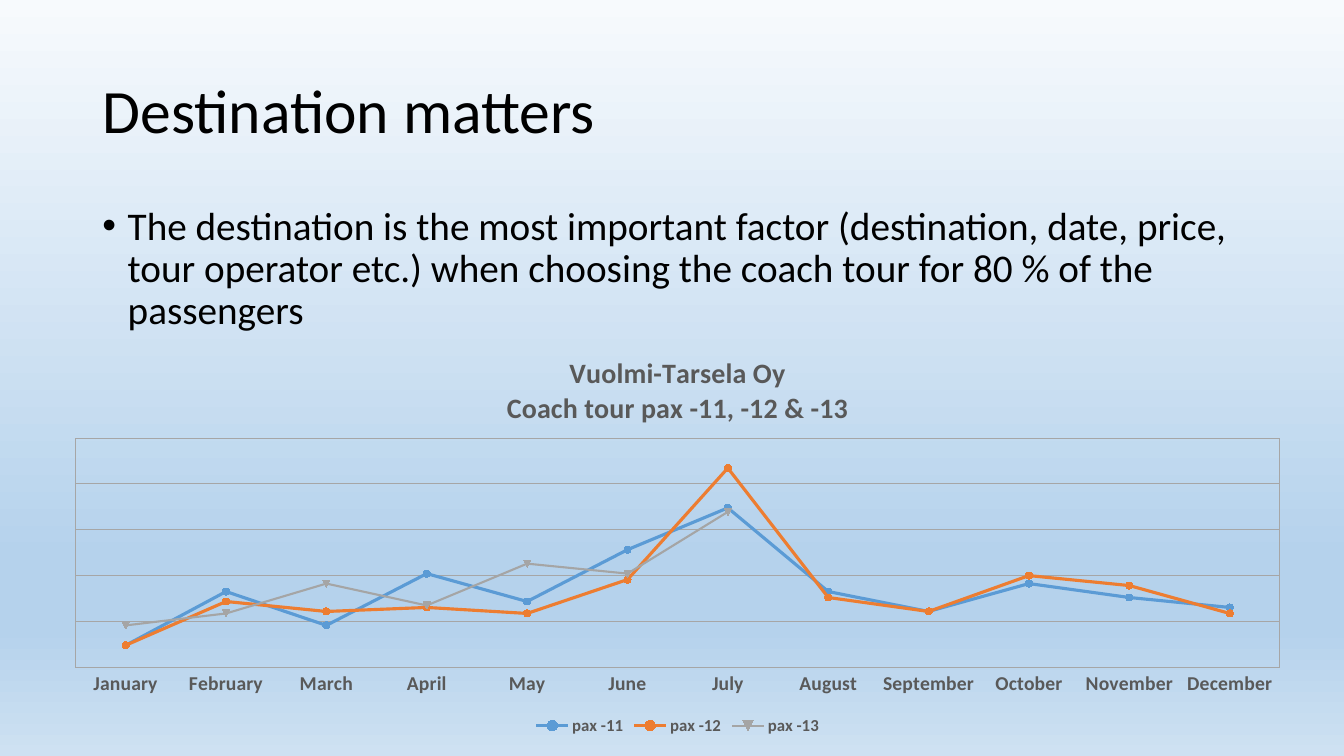
from dataclasses import dataclass

from lxml import etree
from pptx import Presentation
from pptx.chart.data import CategoryChartData
from pptx.dml.color import RGBColor
from pptx.enum.chart import (XL_CHART_TYPE, XL_LEGEND_POSITION, XL_MARKER_STYLE,
                             XL_TICK_MARK)
from pptx.enum.text import MSO_ANCHOR
from pptx.oxml import parse_xml
from pptx.oxml.ns import nsdecls, qn
from pptx.util import Cm, Pt

LINE_MARKERS = XL_CHART_TYPE.LINE_MARKERS
BOTTOM = XL_LEGEND_POSITION.BOTTOM
CIRCLE = XL_MARKER_STYLE.CIRCLE
NO_TICK = XL_TICK_MARK.NONE
MIDDLE, TOP = MSO_ANCHOR.MIDDLE, MSO_ANCHOR.TOP

TITLE = "Destination matters"
BULLET = ("The destination is the most important factor (destination, date, price, "
          "tour operator etc.) when choosing the coach tour for 80 % of the passengers")
CHART_TITLE = ["Vuolmi-Tarsela Oy", "Coach tour pax -11, -12 & -13"]
MONTHS = ["January", "February", "March", "April", "May", "June", "July",
          "August", "September", "October", "November", "December"]
# name, passengers by month, colour, line width, marker (None = automatic)
SERIES = [
    ("pax -11", [11, 38, 21, 47, 33, 59, 80, 38, 28, 42, 35, 30], "5B9BD5", 2.25, CIRCLE),
    ("pax -12", [11, 33, 28, 30, 27, 44, 100, 35, 28, 46, 41, 27], "ED7D31", 2.25, CIRCLE),
    ("pax -13", [21, 27, 42, 31, 52, 47, 78] + [None] * 5, "A5A5A5", 1.5, None),
]
AXIS_MAX, GRID_BANDS = 115, 5

SLIDE_SIZE = Cm(33.87), Cm(19.05)
TITLE_BOX = Cm(2.33), Cm(1.01), Cm(29.21), Cm(3.68)
BODY_BOX = Cm(2.33), Cm(5.07), Cm(29.21), Cm(12.09)
CHART_BOX = Cm(1.27), Cm(8.51), Cm(31.62), Cm(10.13)
PLOT_LAYOUT = {"x": 0.02, "y": 0.25, "w": 0.96, "h": 0.57}
BULLET_INDENT = Cm(0.64)


@dataclass(frozen=True)
class Theme:
    font: str = "Calibri"
    ink: str = "000000"
    muted: str = "595959"
    grid: str = "A6A6A6"
    backdrop: tuple = ((0, "F7FAFD"), (74, "B5D2EC"), (83, "B5D2EC"), (100, "CEE1F2"))
    title: float = 44
    body: float = 28
    chart_title: float = 20
    axis: float = 14
    legend: float = 12
    chart_text: float = 10
    hairline: float = 0.75


THEME = Theme()


def style_font(font, size, color, bold=False):
    font.name, font.size, font.bold = THEME.font, Pt(size), bold
    font.color.rgb = RGBColor.from_string(color)


def style_line(line, color, width):
    line.color.rgb = RGBColor.from_string(color)
    line.width = Pt(width)


def place(shape, area):
    shape.left, shape.top, shape.width, shape.height = area


def paint_background(page):
    stops = "".join(f'<a:gs pos="{pos * 1000}"><a:srgbClr val="{color}"/></a:gs>'
                    for pos, color in THEME.backdrop)
    gradient = parse_xml(
        f'<a:gradFill {nsdecls("a")} rotWithShape="1"><a:gsLst>{stops}</a:gsLst>'
        '<a:lin ang="5400000" scaled="0"/></a:gradFill>')
    fill = page.background.fill
    fill.solid()
    solid = page.element.find(".//" + qn("p:bgPr")).find(qn("a:solidFill"))
    solid.getparent().replace(solid, gradient)


def write_text(shape, text, size, anchor):
    frame = shape.text_frame
    frame.word_wrap = True
    frame.vertical_anchor = anchor
    para = frame.paragraphs[0]
    para.line_spacing = 0.9
    span = para.add_run()
    span.text = text
    style_font(span.font, size, THEME.ink)
    return para


def add_bullet(para):
    props = para._p.get_or_add_pPr()
    props.set("marL", str(BULLET_INDENT))
    props.set("indent", str(-BULLET_INDENT))
    etree.SubElement(props, qn("a:buFont")).set("typeface", "Arial")
    etree.SubElement(props, qn("a:buChar")).set("char", "•")


def frame_plot(chart):
    """Fix the inner plot area and give it a thin border."""
    plot_area = chart._chartSpace.chart.plotArea
    for layout in plot_area.findall(qn("c:layout")):
        plot_area.remove(layout)
    modes = "".join(f'<c:{side}Mode val="edge"/>' for side in "xy")
    sizes = "".join(f'<c:{side} val="{share}"/>' for side, share in PLOT_LAYOUT.items())
    plot_area.insert(0, parse_xml(
        f'<c:layout {nsdecls("c")}><c:manualLayout><c:layoutTarget val="inner"/>'
        f'{modes}{sizes}</c:manualLayout></c:layout>'))
    plot_area.append(parse_xml(
        f'<c:spPr {nsdecls("c", "a")}><a:noFill/><a:ln w="{Pt(THEME.hairline)}">'
        f'<a:solidFill><a:srgbClr val="{THEME.grid}"/></a:solidFill></a:ln></c:spPr>'))


def title_chart(chart):
    chart.has_title = True
    chart.chart_title.include_in_layout = False
    frame = chart.chart_title.text_frame
    for index, text in enumerate(CHART_TITLE):
        para = frame.add_paragraph() if index else frame.paragraphs[0]
        span = para.add_run()
        span.text = text
        style_font(span.font, THEME.chart_title, THEME.muted, bold=True)


def style_axes(chart):
    months = chart.category_axis
    months.major_tick_mark = months.minor_tick_mark = NO_TICK
    style_font(months.tick_labels.font, THEME.axis, THEME.muted, bold=True)
    style_line(months.format.line, THEME.grid, THEME.hairline)
    passengers = chart.value_axis
    passengers.minimum_scale, passengers.maximum_scale = 0, AXIS_MAX
    passengers.major_unit = AXIS_MAX / GRID_BANDS
    passengers.has_major_gridlines = True
    style_line(passengers.major_gridlines.format.line, THEME.grid, THEME.hairline)
    passengers.visible = False


def add_passenger_chart(page):
    data = CategoryChartData()
    data.categories = MONTHS
    for name, values, *_ in SERIES:
        data.add_series(name, values)
    chart = page.shapes.add_chart(LINE_MARKERS, *CHART_BOX, data).chart
    style_font(chart.font, THEME.chart_text, THEME.ink)
    title_chart(chart)
    style_axes(chart)
    frame_plot(chart)
    chart.has_legend = True
    chart.legend.position = BOTTOM
    chart.legend.include_in_layout = False
    style_font(chart.legend.font, THEME.legend, THEME.muted, bold=True)
    chart.plots[0].vary_by_categories = False
    for series, (_, _, color, width, symbol) in zip(chart.plots[0].series, SERIES):
        series.smooth = False
        style_line(series.format.line, color, width)
        if symbol is not None:
            marker = series.marker
            marker.style, marker.size = symbol, 5
            marker.format.fill.solid()
            marker.format.fill.fore_color.rgb = RGBColor.from_string(color)
            style_line(marker.format.line, color, THEME.hairline)


def main():
    deck = Presentation()
    deck.slide_width, deck.slide_height = SLIDE_SIZE
    page = deck.slides.add_slide(deck.slide_layouts.get_by_name("Title Only"))
    paint_background(page)
    title = page.shapes.title
    place(title, TITLE_BOX)
    write_text(title, TITLE, THEME.title, MIDDLE).alignment = 1
    body = page.shapes.add_textbox(*BODY_BOX)
    para = write_text(body, BULLET, THEME.body, TOP)
    para.space_before = Pt(10)
    add_bullet(para)
    add_passenger_chart(page)
    deck.save("out.pptx")


if __name__ == "__main__":
    main()
